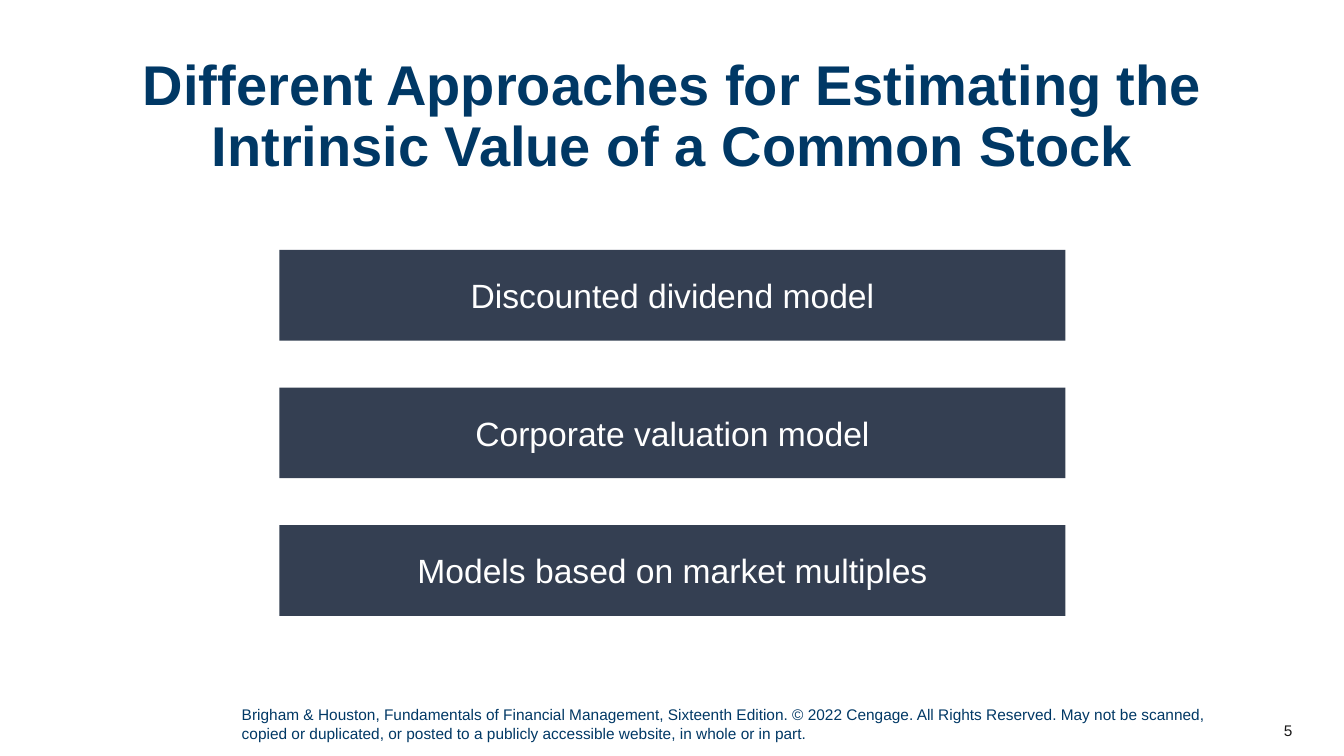
from dataclasses import dataclass

from pptx import Presentation
from pptx.dml.color import RGBColor
from pptx.enum.shapes import MSO_SHAPE as Shape
from pptx.enum.text import MSO_ANCHOR as Anchor, PP_ALIGN as Align
from pptx.util import Inches, Pt

SLIDE_WIDTH, SLIDE_HEIGHT = Inches(13.33), Inches(7.5)
NAVY, SLATE, WHITE, INK = "003865", "343F52", "FFFFFF", "181717"
FIRST_ROW, ROW_PITCH = 33.07, 18.2
APPROACHES = (
    "Discounted dividend model",
    "Corporate valuation model",
    "Models based on market multiples",
)
COPYRIGHT = (
    "Brigham & Houston, Fundamentals of Financial Management, Sixteenth Edition. "
    "© 2022 Cengage. All Rights Reserved. May not be scanned, copied or duplicated, "
    "or posted to a publicly accessible website, in whole or in part."
)


@dataclass(frozen=True)
class Area:
    """Place on the slide, in percent of its width and height."""

    left: float
    top: float
    width: float
    height: float

    def lengths(self) -> tuple[int, int, int, int]:
        return (
            round(SLIDE_WIDTH * self.left / 100),
            round(SLIDE_HEIGHT * self.top / 100),
            round(SLIDE_WIDTH * self.width / 100),
            round(SLIDE_HEIGHT * self.height / 100),
        )


def rgb(value: str) -> RGBColor:
    return RGBColor.from_string(value)


def write(shape, text: str, *, size: float, color: str, bold: bool = False,
          align=Align.LEFT, anchor=Anchor.TOP, line_spacing: float = 1.0) -> None:
    frame = shape.text_frame
    frame.word_wrap = True
    frame.vertical_anchor = anchor
    paragraph = frame.paragraphs[0]
    paragraph.alignment = align
    paragraph.line_spacing = line_spacing
    run = paragraph.add_run()
    run.text = text
    run.font.name = "Arial"
    run.font.size = Pt(size)
    run.font.bold = bold
    run.font.color.rgb = rgb(color)


def add_text(slide, area: Area, text: str, **style) -> None:
    write(slide.shapes.add_textbox(*area.lengths()), text, **style)


def add_bar(slide, area: Area, text: str) -> None:
    bar = slide.shapes.add_shape(Shape.RECTANGLE, *area.lengths())
    bar.shadow.inherit = False
    bar.fill.solid()
    bar.fill.fore_color.rgb = rgb(SLATE)
    bar.line.fill.background()
    write(bar, text, size=24, color=WHITE, align=Align.CENTER, anchor=Anchor.MIDDLE)


def main() -> None:
    deck = Presentation()
    deck.slide_width, deck.slide_height = SLIDE_WIDTH, SLIDE_HEIGHT
    slide = deck.slides.add_slide(deck.slide_layouts[6])

    add_text(slide, Area(3.9, 6.93, 92.2, 17.73),
             "Different Approaches for Estimating the Intrinsic Value of a Common Stock",
             size=40, color=NAVY, bold=True, align=Align.CENTER, line_spacing=0.9)
    for index, approach in enumerate(APPROACHES):
        add_bar(slide, Area(20.78, FIRST_ROW + index * ROW_PITCH, 58.5, 12), approach)
    add_text(slide, Area(17.25, 92.67, 73.5, 6.27), COPYRIGHT, size=11, color=NAVY)
    add_text(slide, Area(90.9, 94, 6, 5.33), "5", size=11, color=INK,
             align=Align.RIGHT, anchor=Anchor.MIDDLE)
    deck.save("out.pptx")


if __name__ == "__main__":
    main()
